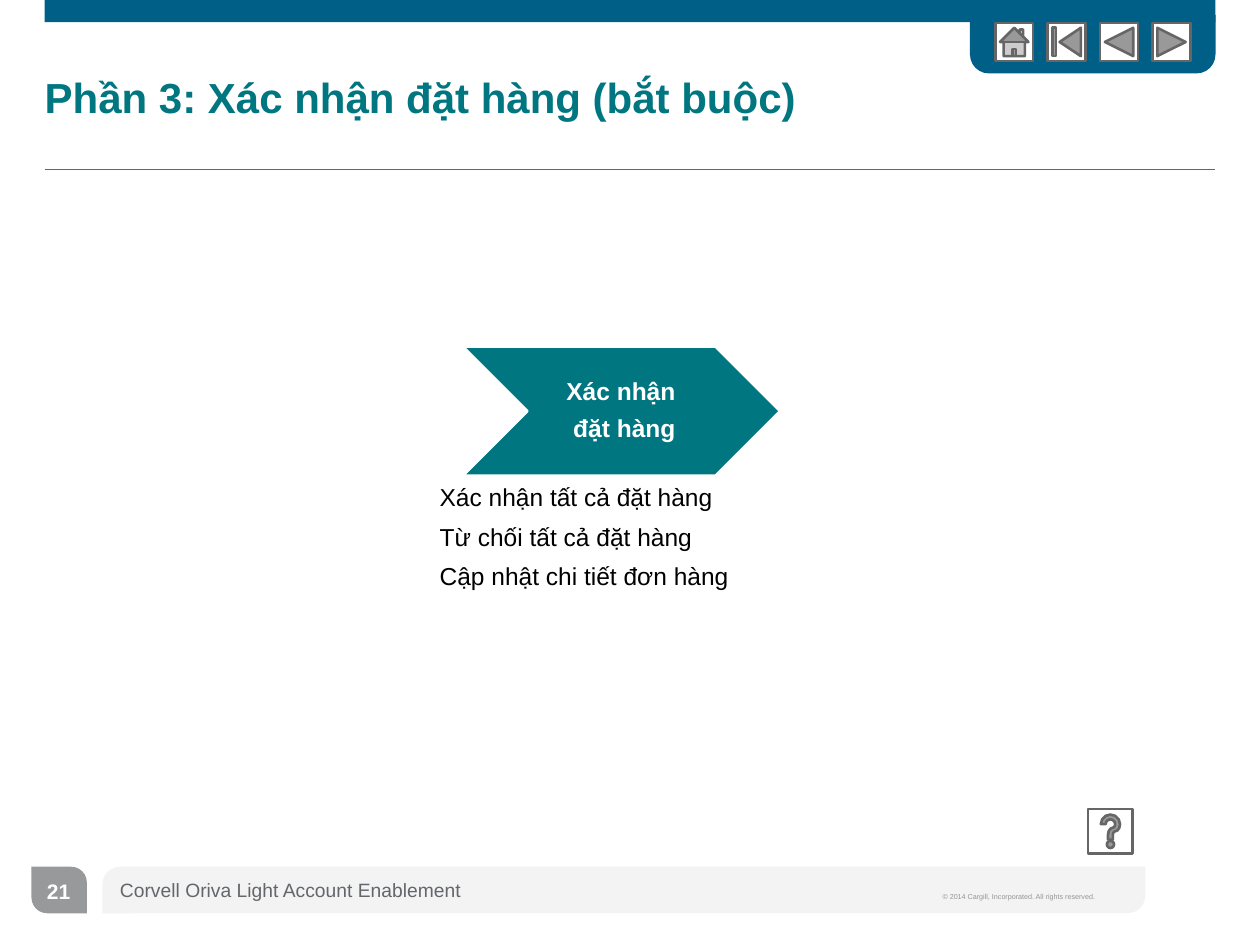
from lxml.etree import SubElement
from pptx import Presentation
from pptx.dml.color import RGBColor
from pptx.enum.shapes import MSO_CONNECTOR, MSO_SHAPE
from pptx.enum.text import MSO_ANCHOR, MSO_AUTO_SIZE, PP_ALIGN
from pptx.oxml.ns import qn
from pptx.util import Pt

BLUE = RGBColor(0x00, 0x5F, 0x86)
TEAL = RGBColor(0x00, 0x76, 0x81)
DARK = RGBColor(0x66, 0x66, 0x66)
SLATE = RGBColor(0x63, 0x66, 0x6A)
GREY = RGBColor(0x97, 0x99, 0x9B)
PALE = RGBColor(0xD0, 0xD0, 0xD0)
FAINT = RGBColor(0x95, 0x95, 0x95)
WHITE = RGBColor(0xFF, 0xFF, 0xFF)
BLACK = RGBColor(0x00, 0x00, 0x00)


def style(target, values):
    for name, value in values.items():
        setattr(target, name, value)


def place(shape, box):
    names = ("left", "top", "width", "height")
    style(shape, dict(zip(names, map(Pt, box))))


def write(shape, lines, size, color, bold=False, frame=None, para=None, gap=0):
    """Fill a text frame; gap is the space before each later line."""
    body = shape.text_frame
    style(body, {"word_wrap": True, "auto_size": MSO_AUTO_SIZE.NONE,
                 "vertical_anchor": MSO_ANCHOR.TOP, **(frame or {})})
    for i, line in enumerate(lines):
        part = body.paragraphs[0] if i == 0 else body.add_paragraph()
        style(part, {"alignment": PP_ALIGN.LEFT,
                     "space_before": Pt(gap if i else 0), **(para or {})})
        run = part.add_run()
        run.text = line
        style(run.font, {"name": "Arial", "size": Pt(size), "bold": bold})
        run.font.color.rgb = color
    return body


def draw(shapes, kind, box, fill, line=None, adj=()):
    shape = shapes.add_shape(kind, *map(Pt, box))
    shape.shadow.inherit = False
    shape.fill.solid()
    shape.fill.fore_color.rgb = fill
    if line:
        shape.line.color.rgb = line
        shape.line.width = Pt(1.5)
    else:
        shape.line.fill.background()
    for i, value in enumerate(adj):
        shape.adjustments[i] = value
    return shape


def label(shapes, box, lines, size, color, **opts):
    return write(shapes.add_textbox(*map(Pt, box)), lines, size, color, **opts)


def rule(shapes, left, right, y):
    line = shapes.add_connector(MSO_CONNECTOR.STRAIGHT,
                                Pt(left), Pt(y), Pt(right), Pt(y))
    line.line.color.rgb = DARK
    line.line.width = Pt(0.5)
    SubElement(line._element.spPr, qn("a:effectLst"))


def header(shapes):
    draw(shapes, MSO_SHAPE.RECTANGLE, (25.5, 0, 669, 12.7), BLUE)
    rule(shapes, 25.5, 694.5, 97)
    draw(shapes, MSO_SHAPE.ROUND_2_SAME_RECTANGLE,
         (554.3, 8.6, 140.3, 33.4), BLUE, adj=(0, 0.324))


def footer(shapes):
    bar = draw(shapes, MSO_SHAPE.ROUND_2_DIAG_RECTANGLE,
               (58.5, 495.3, 596, 26.6), PALE, adj=(0.381, 0))
    tint = bar.fill._xPr.find(".//" + qn("a:srgbClr"))
    SubElement(tint, qn("a:alpha"), val="25000")
    write(bar, ["Corvell Oriva Light Account Enablement"], 11, SLATE,
          frame={"vertical_anchor": MSO_ANCHOR.MIDDLE})
    note = label(shapes, (531.5, 505.4, 114.5, 15.8),
                 ["© 2014 Cargill, Incorporated. All rights reserved."],
                 7, FAINT, frame={"word_wrap": False})
    note.paragraphs[0].runs[0]._r.get_or_add_rPr().set("baseline", "30000")
    draw(shapes, MSO_SHAPE.ROUND_2_DIAG_RECTANGLE,
         (18, 495.3, 31.7, 26.6), GREY, adj=(0, 0.337))
    label(shapes, (18.7, 494.9, 29.5, 28.8), ["21"], 12, WHITE, bold=True,
          frame={"word_wrap": False, "vertical_anchor": MSO_ANCHOR.MIDDLE},
          para={"alignment": PP_ALIGN.CENTER})


def step(shapes):
    group = shapes.add_group_shape().shapes
    draw(group, MSO_SHAPE.CHEVRON, (264.5, 198, 181.3, 73.8), TEAL, WHITE)
    label(group, (301.7, 198, 107.3, 73.8), ["Xác nhận ", "đặt hàng"],
          14, WHITE, bold=True,
          frame={"vertical_anchor": MSO_ANCHOR.MIDDLE, "margin_left": Pt(4.3),
                 "margin_right": Pt(1.4), "margin_top": Pt(1.4),
                 "margin_bottom": Pt(1.4)},
          para={"alignment": PP_ALIGN.CENTER, "line_spacing": 0.9,
                "space_after": Pt(5.5)})


def choices(holder):
    place(holder, (244, 271.6, 204, 70.6))
    body = write(holder, ["Xác nhận tất cả đặt hàng", "Từ chối tất cả đặt hàng",
                          "Cập nhật chi tiết đơn hàng"], 14, BLACK, gap=6)
    for part in body.paragraphs:
        props = part._p.get_or_add_pPr()
        props.set("marL", "0")
        props.set("indent", "0")
        SubElement(props, qn("a:buNone"))


def buttons(shapes):
    draw(shapes, MSO_SHAPE.ACTION_BUTTON_HELP,
         (621.8, 462.3, 25.5, 25.5), WHITE, DARK)
    group = shapes.add_group_shape().shapes
    kinds = (MSO_SHAPE.ACTION_BUTTON_HOME, MSO_SHAPE.ACTION_BUTTON_BEGINNING,
             MSO_SHAPE.ACTION_BUTTON_BACK_OR_PREVIOUS,
             MSO_SHAPE.ACTION_BUTTON_FORWARD_OR_NEXT)
    for i, kind in enumerate(kinds):
        draw(group, kind, (568.8 + 29.95 * i, 13.2, 21.6, 21.6), WHITE, DARK)


def main():
    deck = Presentation()
    style(deck, {"slide_width": Pt(720), "slide_height": Pt(540)})
    slide = deck.slides.add_slide(deck.slide_layouts[1])
    shapes = slide.shapes

    # Frame of the page
    header(shapes)
    footer(shapes)

    # Title
    title = shapes.title
    place(title, (25.5, 25.5, 669, 59.8))
    sides = ("left", "right", "top", "bottom")
    write(title, ["Phần 3: Xác nhận đặt hàng (bắt buộc)"], 24, TEAL, bold=True,
          frame={"vertical_anchor": MSO_ANCHOR.MIDDLE,
                 **{"margin_" + side: 0 for side in sides}})

    # Step with its choices
    step(shapes)
    choices(slide.placeholders[1])

    # Navigation
    buttons(shapes)
    deck.save("out.pptx")


if __name__ == "__main__":
    main()
